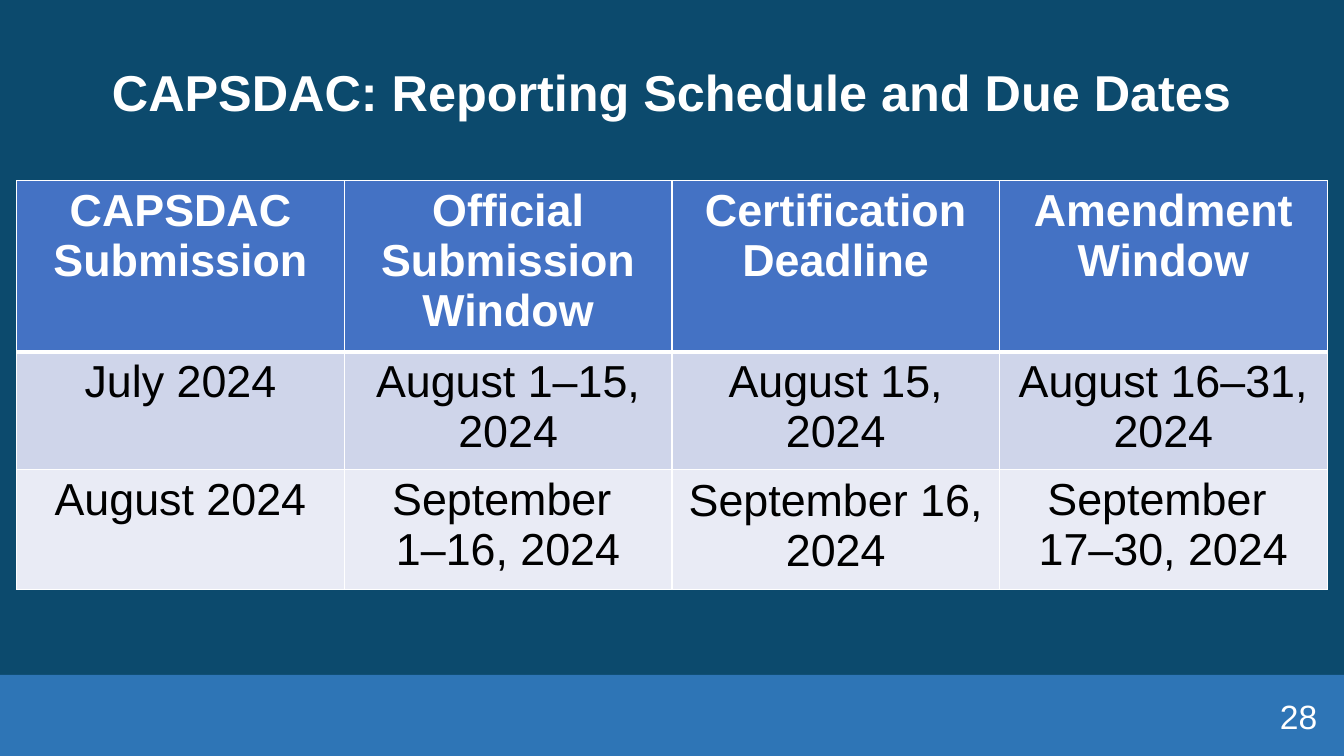
"""Build the CAPSDAC reporting schedule slide."""
from lxml import etree
from pptx import Presentation
from pptx import util as u
from pptx.dml.color import RGBColor
from pptx.enum import shapes, text
from pptx.oxml import ns

NAVY = RGBColor(0x0C, 0x4A, 0x6D)
BAR_BLUE = RGBColor(0x2E, 0x75, 0xB6)
HEADER_BLUE = RGBColor(0x44, 0x72, 0xC4)
BAND_DARK = RGBColor(0xCF, 0xD5, 0xEA)
BAND_LIGHT = RGBColor(0xE9, 0xEB, 0xF5)
WHITE = RGBColor(0xFF, 0xFF, 0xFF)
BLACK = RGBColor(0, 0, 0)

SCHEDULE = [
    ["CAPSDAC Submission", "Official Submission Window",
     "Certification Deadline", "Amendment Window"],
    ["July 2024", "August 1–15, 2024", "August 15, 2024", "August 16–31, 2024"],
    ["August 2024", "September \n1–16, 2024", "September 16, 2024",
     "September \n17–30, 2024"],
]
ROW_HEIGHTS = [115, 79, 79]
ROW_FILLS = [HEADER_BLUE, BAND_DARK, BAND_LIGHT]


class SlideBuilder:
    font_name = "Arial"

    def __init__(self, slide):
        self.slide = slide

    def background(self, color):
        fill = self.slide.background.fill
        fill.solid()
        fill.fore_color.rgb = color

    def bar(self, left, top, width, height, color):
        shape = self.slide.shapes.add_shape(
            shapes.MSO_SHAPE.RECTANGLE, *map(u.Pt, (left, top, width, height)))
        shape.shadow.inherit = False
        shape.fill.solid()
        shape.fill.fore_color.rgb = color
        shape.line.fill.background()

    def set_text(self, frame, content, size, color, bold, align):
        frame.word_wrap = True
        frame.text = content
        for paragraph in frame.paragraphs:
            paragraph.alignment = align
            font = paragraph.font
            font.name, font.size, font.bold = self.font_name, u.Pt(size), bold
            font.color.rgb = color

    def label(self, left, top, width, height, content, size, bold, align):
        box = self.slide.shapes.add_textbox(*map(u.Pt, (left, top, width, height)))
        frame = box.text_frame
        self.set_text(frame, content, size, WHITE, bold, align)
        frame.vertical_anchor = text.MSO_ANCHOR.MIDDLE
        return frame

    def border(self, cell, side, width):
        properties = cell._tc.get_or_add_tcPr()
        line = etree.SubElement(properties, ns.qn(f"a:ln{side}"), w=str(u.Pt(width)))
        fill = etree.SubElement(line, ns.qn("a:solidFill"))
        etree.SubElement(fill, ns.qn("a:srgbClr"), val=str(WHITE))

    def table(self, left, top, width, rows, heights, fills, size):
        table = self.slide.shapes.add_table(
            len(rows), len(rows[0]), u.Pt(left), u.Pt(top),
            u.Pt(width), u.Pt(sum(heights))).table
        for row_index, row in enumerate(rows):
            is_header = row_index == 0
            table.rows[row_index].height = u.Pt(heights[row_index])
            widths = {"L": 1, "R": 1, "T": 3 if row_index == 1 else 1,
                      "B": 3 if is_header else 1}
            for column_index, content in enumerate(row):
                cell = table.cell(row_index, column_index)
                self.set_text(cell.text_frame, content, size,
                              WHITE if is_header else BLACK, is_header,
                              text.PP_ALIGN.CENTER)
                for side, line_width in widths.items():
                    self.border(cell, side, line_width)
                cell.fill.solid()
                cell.fill.fore_color.rgb = fills[row_index]
        return table


def main():
    presentation = Presentation()
    presentation.slide_width, presentation.slide_height = u.Pt(960), u.Pt(540)
    slide = presentation.slides.add_slide(presentation.slide_layouts[6])
    builder = SlideBuilder(slide)
    builder.background(NAVY)
    builder.bar(0, 482, 960, 58, BAR_BLUE)
    title = builder.label(12, 16, 936, 104, "CAPSDAC: Reporting Schedule and Due Dates",
                          36, True, text.PP_ALIGN.CENTER)
    title.paragraphs[0].line_spacing = 0.9
    table = builder.table(12, 129, 936, SCHEDULE, ROW_HEIGHTS, ROW_FILLS, 32)
    deadline = table.cell(2, 2)
    deadline.margin_left = deadline.margin_right = u.Pt(4.5)
    deadline.margin_top = deadline.margin_bottom = u.Pt(4.5)
    builder.label(732, 497, 216, 29, "28", 24, False, text.PP_ALIGN.RIGHT)
    presentation.save("out.pptx")


if __name__ == "__main__":
    main()
